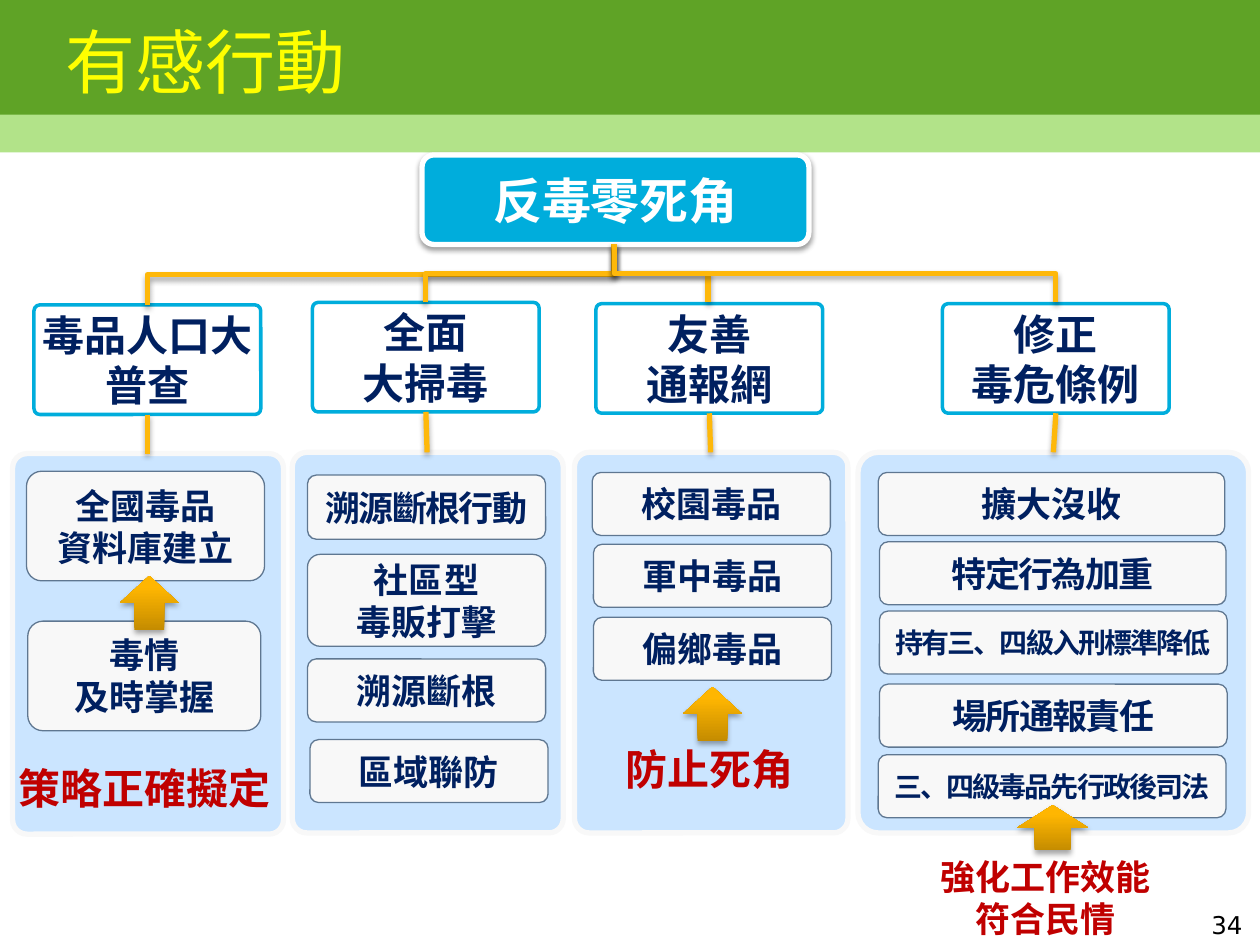
from typing import NamedTuple

from lxml import etree
from pptx import Presentation
from pptx.dml.color import RGBColor
from pptx.enum.shapes import MSO_CONNECTOR, MSO_SHAPE
from pptx.enum.text import MSO_ANCHOR, PP_ALIGN
from pptx.oxml.ns import qn
from pptx.util import Pt

PX = 9144  # 100 px to the inch
RECT, ROUND, ARROW = MSO_SHAPE.RECTANGLE, MSO_SHAPE.ROUNDED_RECTANGLE, MSO_SHAPE.UP_ARROW
LINE, ELBOW = MSO_CONNECTOR.STRAIGHT, MSO_CONNECTOR.ELBOW
LEFT, MID, RIGHT = PP_ALIGN.LEFT, PP_ALIGN.CENTER, PP_ALIGN.RIGHT
TOP, CENTRE = MSO_ANCHOR.TOP, MSO_ANCHOR.MIDDLE

WHITE = RGBColor(0xFF, 0xFF, 0xFF)
BLACK = RGBColor(0, 0, 0)
GREEN = RGBColor(0x5F, 0xA3, 0x26)
LIME = RGBColor(0xB2, 0xE3, 0x89)
YELLOW = RGBColor(0xFF, 0xFF, 0)
CYAN = RGBColor(0, 0xAD, 0xDC)
NAVY = RGBColor(0, 0x20, 0x60)
RED = RGBColor(0xC0, 0, 0)
SKY = RGBColor(0x99, 0xCC, 0xFF)
PALE = RGBColor(0xF8, 0xF8, 0xF8)
SLATE = RGBColor(0x5F, 0x77, 0x91)
GOLD = RGBColor(0xFE, 0xB8, 0x0A)
AMBER = RGBColor(0xFF, 0xB6, 0x01)
BROWN = RGBColor(0xC5, 0x8C, 0)
CJK = "Noto Sans CJK SC"


class Area(NamedTuple):
    x: int
    y: int
    w: int
    h: int

    def emu(self) -> list[int]:
        return [n * PX for n in self]


class Look(NamedTuple):
    fill: RGBColor
    edge: RGBColor | None = None
    width: float = 0
    bend: float | None = None
    alpha: int = 100


class Type(NamedTuple):
    size: int
    color: RGBColor
    font: str = CJK
    bold: bool = True
    align: PP_ALIGN = MID
    space: int = 0


class Card(NamedTuple):
    area: Area
    text: str
    size: int = 20
    space: int = 0


class Branch(NamedTuple):
    head: Area
    title: str
    panel: Area
    cards: list[Card]


ROOT = Look(CYAN, WHITE, 3, 0.132)
HEAD = Look(WHITE, CYAN, 2, 0.053)
PANEL = Look(SKY, PALE, 3, 0.053, 50)
CARD = Look(PALE, SLATE, 0.75, 0.139)

BRANCHES = [
    Branch(Area(27, 242, 180, 87), "毒品人口大普查", Area(10, 360, 215, 302), [
        Card(Area(21, 374, 189, 87), "全國毒品\n資料庫建立"),
        Card(Area(22, 493, 185, 87), "毒情\n及時掌握")]),
    Branch(Area(248, 240, 180, 87), "全面\n大掃毒", Area(232, 359, 215, 302), [
        Card(Area(244, 377, 189, 51), "溯源斷根行動", space=-100),
        Card(Area(244, 440, 189, 73), "社區型\n毒販打擊"),
        Card(Area(244, 523, 189, 50), "溯源斷根"),
        Card(Area(246, 587, 189, 50), "區域聯防")]),
    Branch(Area(473, 241, 180, 87), "友善\n通報網", Area(456, 359, 217, 302), [
        Card(Area(470, 375, 189, 50), "校園毒品"),
        Card(Area(471, 432, 189, 50), "軍中毒品"),
        Card(Area(471, 490, 189, 50), "偏鄉毒品")]),
    Branch(Area(748, 241, 180, 87), "修正\n毒危條例", Area(681, 359, 310, 302), [
        Card(Area(697, 375, 275, 50), "擴大沒收"),
        Card(Area(698, 430, 275, 50), "特定行為加重", space=-100),
        Card(Area(698, 485, 276, 50), "持有三、四級入刑標準降低", 16, -100),
        Card(Area(698, 543, 276, 50), "場所通報責任", space=-100),
        Card(Area(697, 599, 276, 50), "三、四級毒品先行政後司法", 16, -100)]),
]
NOTES = [
    Card(Area(4, 600, 222, 50), "策略正確擬定", 24),
    Card(Area(486, 585, 155, 50), "防止死角", 24),
    Card(Area(736, 674, 188, 77), "強化工作效能\n符合民情"),
]
ARROWS = [Area(95, 457, 47, 43), Area(542, 545, 47, 43), Area(807, 639, 57, 36)]


def shade(item, alpha: int = 35) -> None:
    """Put a soft shadow below a shape or a line."""
    props = item._element.spPr
    for old in props.findall(qn("a:effectLst")):
        props.remove(old)
    glow = etree.SubElement(etree.SubElement(props, qn("a:effectLst")), qn("a:outerShdw"),
                            blurRad="40000", dist="23000", dir="5400000", rotWithShape="0")
    tint = etree.SubElement(glow, qn("a:srgbClr"), val="000000")
    etree.SubElement(tint, qn("a:alpha"), val=str(alpha * 1000))


def write(item, text: str, kind: Type, anchor=CENTRE, wrap: bool = True, inset: int = 10) -> None:
    frame = item.text_frame
    form = {"word_wrap": wrap, "vertical_anchor": anchor,
            "margin_left": inset * PX, "margin_right": inset * PX,
            "margin_top": 5 * PX, "margin_bottom": 5 * PX}
    for key, val in form.items():
        setattr(frame, key, val)
    frame.text = text
    for para in frame.paragraphs:
        para.alignment = kind.align
        for run in para.runs:
            form = {"name": kind.font, "size": Pt(kind.size), "bold": kind.bold}
            for key, val in form.items():
                setattr(run.font, key, val)
            run.font.color.rgb = kind.color
            props = run._r.get_or_add_rPr()
            etree.SubElement(props, qn("a:ea"), typeface=kind.font)
            if kind.space:
                props.set("spc", str(kind.space))


def block(slide, area: Area, look: Look, form=ROUND):
    item = slide.shapes.add_shape(form, *area.emu())
    item.shadow.inherit = False
    item.fill.solid()
    item.fill.fore_color.rgb = look.fill
    if look.alpha < 100:
        tint = item._element.spPr.find(qn("a:solidFill"))[0]
        etree.SubElement(tint, qn("a:alpha"), val=str(look.alpha * 1000))
    if look.edge is None:
        item.line.fill.background()
    else:
        item.line.color.rgb = look.edge
        item.line.width = Pt(look.width)
    if look.bend is not None:
        item.adjustments[0] = look.bend
    return item


def label(slide, area: Area, text: str, kind: Type, anchor=TOP, wrap: bool = False) -> None:
    write(slide.shapes.add_textbox(*area.emu()), text, kind, anchor, wrap)


def wire(slide, form, *ends: int):
    item = slide.shapes.add_connector(form, *[n * PX for n in ends])
    item.line.color.rgb = GOLD
    item.line.width = Pt(3)
    shade(item)
    return item


def fork(slide, x1: int, y1: int, x2: int, y2: int) -> None:
    """Elbow that leaves downward: a level one, turned about its centre."""
    mx, my = (x1 + x2) // 2, (y1 + y2) // 2
    dx, dy = abs(x2 - x1) // 2, (y2 - y1) // 2
    side = 1 if x2 < x1 else -1
    item = wire(slide, ELBOW, mx - side * dy, my - dx, mx + side * dy, my + dx)
    item._element.spPr.find(qn("a:xfrm")).set("rot", "5400000" if side > 0 else "16200000")


def arrow(slide, area: Area) -> None:
    item = block(slide, area, Look(AMBER), ARROW)
    item.fill.gradient()
    item.fill.gradient_angle = 90
    for stop, place, color in zip(item.fill.gradient_stops, (0, 0.8), (BROWN, AMBER)):
        stop.position = place
        stop.color.rgb = color
    shade(item)


def main() -> None:
    deck = Presentation()
    deck.slide_width, deck.slide_height = 1000 * PX, 750 * PX
    slide = deck.slides.add_slide(deck.slide_layouts[6])

    # Title band and page number
    block(slide, Area(0, 87, 1000, 34), Look(LIME), RECT)
    block(slide, Area(0, 0, 1000, 91), Look(GREEN), RECT)
    label(slide, Area(42, 17, 923, 62), "有感行動", Type(40, YELLOW, "Arial", False, LEFT), CENTRE, True)
    label(slide, Area(763, 717, 233, 26), "34", Type(14, BLACK, "DejaVu Sans", False, RIGHT), wrap=True)

    # Root of the tree
    root = Area(335, 123, 307, 71)
    top = block(slide, root, ROOT)
    shade(top, 38)
    write(top, "反毒零死角", Type(28, WHITE), wrap=False)

    # Branches: head, panel, cards and wires
    for head, title, panel, cards in BRANCHES:
        write(block(slide, head, HEAD), title, Type(24, NAVY), inset=5)
        block(slide, panel, PANEL)
        for area, text, size, space in cards:
            write(block(slide, area, CARD), text, Type(size, NAVY, space=space))
        mid, foot = head.x + head.w // 2, head.y + head.h
        fork(slide, root.x + root.w // 2, root.y + root.h, mid, head.y)
        wire(slide, LINE, mid, foot, panel.x + panel.w // 2, panel.y)

    # Red notes and arrows
    for area, text, size, _ in NOTES:
        label(slide, area, text, Type(size, RED))
    for area in ARROWS:
        arrow(slide, area)

    deck.save("out.pptx")


if __name__ == "__main__":
    main()
